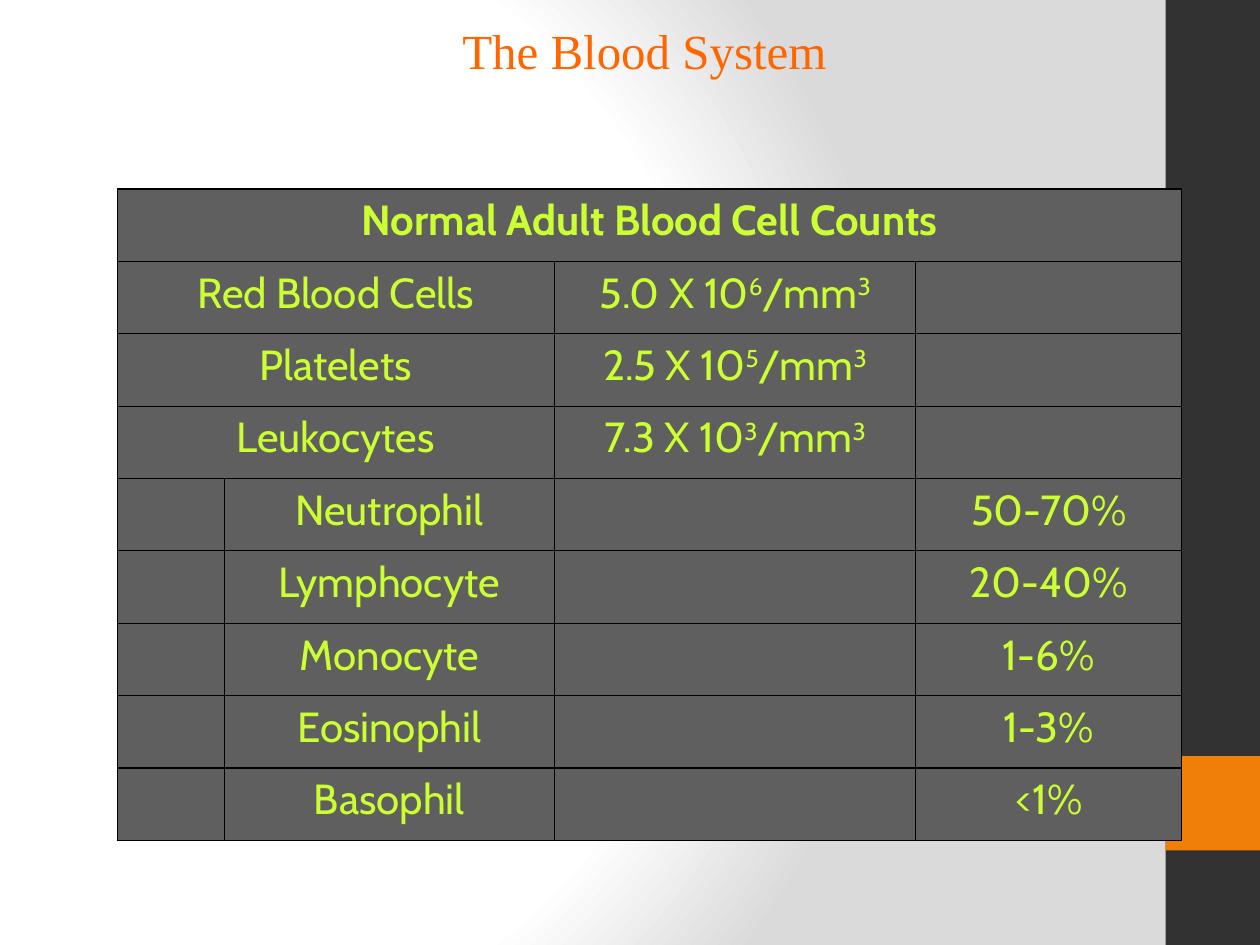
from dataclasses import dataclass

from lxml.etree import SubElement
from pptx import Presentation
from pptx.dml.color import RGBColor
from pptx.enum.shapes import MSO_SHAPE
from pptx.enum.text import PP_ALIGN
from pptx.oxml.ns import qn
from pptx.util import Inches, Pt


@dataclass(frozen=True)
class Theme:
    white: str = "FFFFFF"
    grey: str = "DADADA"
    band: str = "323232"
    accent: str = "F07F09"
    title: str = "FF6600"
    cell: str = "5F5F5F"
    text: str = "CCFF33"
    border: str = "000000"
    title_font: str = "Times New Roman"
    table_font: str = "Cabin"
    title_size: int = 28
    table_size: int = 24


theme = Theme()


def write(tf, text, font=theme.table_font, size=theme.table_size,
          color=theme.text, bold=False, spacing=None):
    """Write one centred paragraph; text between ^ marks is superscript."""
    p = tf.paragraphs[0]
    p.alignment = PP_ALIGN.CENTER
    p.line_spacing = spacing
    for i, part in enumerate(text.split("^")):
        if not part:
            continue
        r = p.add_run()
        r.text = part
        r.font.name, r.font.size, r.font.bold = font, Pt(size), bold
        r.font.color.rgb = RGBColor.from_string(color)
        if i % 2:
            r.font._element.set("baseline", "30000")


def style_cell(cell):
    """Give a cell thin borders on all sides and a solid fill."""
    tcPr = cell._tc.get_or_add_tcPr()
    for side in ("a:lnL", "a:lnR", "a:lnT", "a:lnB"):
        ln = SubElement(tcPr, qn(side), w=str(Pt(0.75)))
        SubElement(SubElement(ln, qn("a:solidFill")), qn("a:srgbClr"), val=theme.border)
    cell.fill.solid()
    cell.fill.fore_color.rgb = RGBColor.from_string(theme.cell)


prs = Presentation()
prs.slide_width, prs.slide_height = Inches(10), Inches(7.5)
s = prs.slides.add_slide(prs.slide_layouts[6])

# Background: radial gradient
s.background.fill.gradient()
grad = s._element.find(".//" + qn("a:gradFill"))
for child in list(grad):
    grad.remove(child)
stops = SubElement(grad, qn("a:gsLst"))
for pos, color in ((0, theme.white), (75, theme.white), (100, theme.grey)):
    gs = SubElement(stops, qn("a:gs"), pos=str(pos * 1000))
    SubElement(gs, qn("a:srgbClr"), val=color)
circle = SubElement(grad, qn("a:path"), path="circle")
SubElement(circle, qn("a:fillToRect"), l="20000", t="50000", r="100000", b="50000")

# Side band with accent block
for top, height, color in ((0, 7.5, theme.band), (6, 0.75, theme.accent)):
    sp = s.shapes.add_shape(MSO_SHAPE.RECTANGLE, Inches(9.25), Inches(top),
                            Inches(0.75), Inches(height))
    sp.shadow.inherit = False
    sp.fill.solid()
    sp.fill.fore_color.rgb = RGBColor.from_string(color)
    sp.line.fill.background()

# Title
tf = s.shapes.add_textbox(Inches(0.56), Inches(0.22), Inches(9.11), Inches(0.45)).text_frame
tf.word_wrap = True
write(tf, "The Blood System", font=theme.title_font, size=theme.title_size,
      color=theme.title, spacing=0.75)

# Table of blood cell counts
rows = [
    ("Normal Adult Blood Cell Counts", "", "", ""),
    ("Red Blood Cells", "", "5.0 X 10^6^/mm^3^", ""),
    ("Platelets", "", "2.5 X 10^5^/mm^3^", ""),
    ("Leukocytes", "", "7.3 X 10^3^/mm^3^", ""),
    ("", "Neutrophil", "", "50-70%"),
    ("", "Lymphocyte", "", "20-40%"),
    ("", "Monocyte", "", "1-6%"),
    ("", "Eosinophil", "", "1-3%"),
    ("", "Basophil", "", "<1%"),
]
table = s.shapes.add_table(len(rows), 4, Inches(0.93), Inches(1.5),
                           Inches(8.44), Inches(5.17)).table
table.first_row = table.horz_banding = False
for column, width in zip(table.columns, (0.85, 2.62, 2.87, 2.11)):
    column.width = Inches(width)

for i, row in enumerate(rows):
    for j, text in enumerate(row):
        cell = table.cell(i, j)
        style_cell(cell)
        if text:
            write(cell.text_frame, text, bold=i == 0)

# The heading spans the table; each main cell type spans two columns
table.cell(0, 0).merge(table.cell(0, 3))
for i in range(1, 4):
    table.cell(i, 0).merge(table.cell(i, 1))

prs.save("out.pptx")
